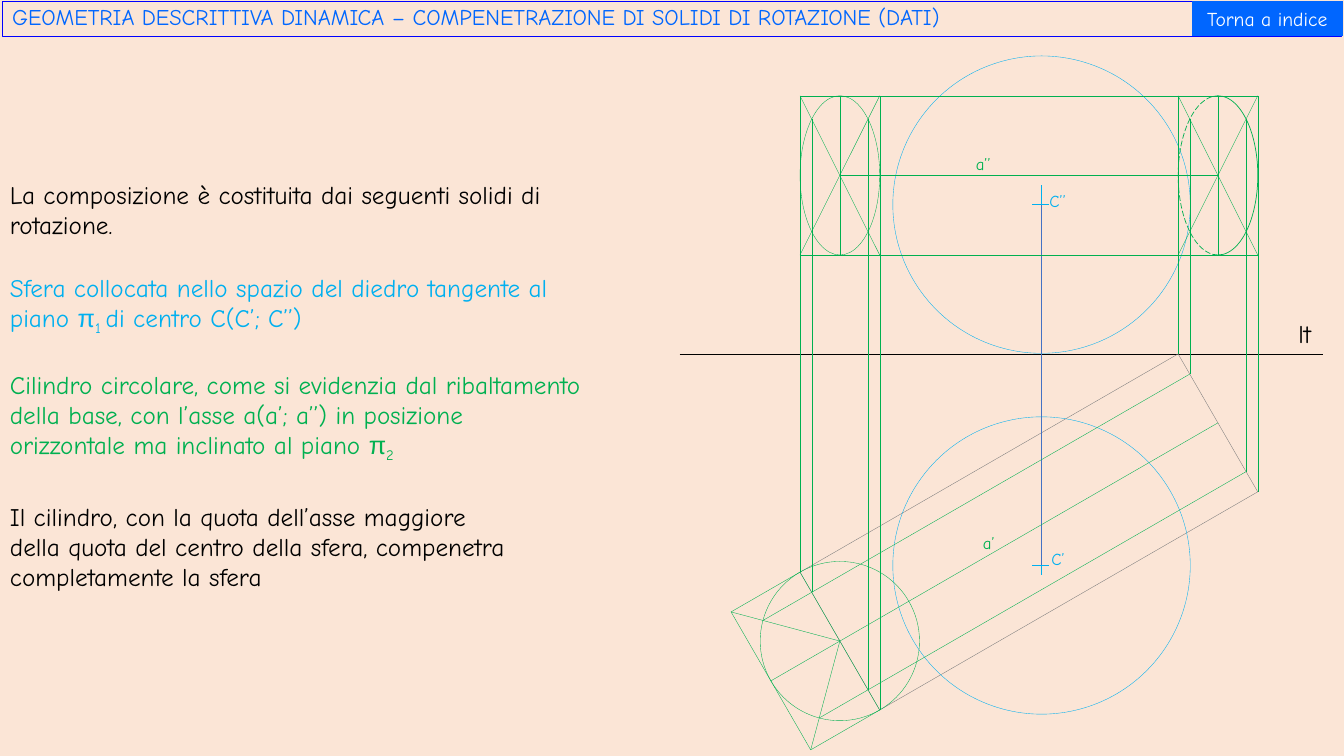
from math import cos, radians, sin, sqrt

from lxml import etree
from pptx import Presentation
from pptx.dml.color import RGBColor
from pptx.enum.dml import MSO_LINE
from pptx.enum.shapes import MSO_CONNECTOR, MSO_SHAPE
from pptx.enum.text import MSO_ANCHOR, MSO_AUTO_SIZE, PP_ALIGN
from pptx.oxml.ns import qn
from pptx.util import Inches, Pt

STRAIGHT = MSO_CONNECTOR.STRAIGHT
RECTANGLE, OVAL, ARC = MSO_SHAPE.RECTANGLE, MSO_SHAPE.OVAL, MSO_SHAPE.ARC
BUTTON = MSO_SHAPE.ACTION_BUTTON_CUSTOM
LEFT, CENTER = PP_ALIGN.LEFT, PP_ALIGN.CENTER

BACKGROUND = RGBColor(0xFB, 0xE5, 0xD6)
BLACK = RGBColor(0x00, 0x00, 0x00)
WHITE = RGBColor(0xFF, 0xFF, 0xFF)
GRAY = RGBColor(0x7C, 0x7C, 0x7C)
CYAN = RGBColor(0x00, 0xB0, 0xF0)
GREEN = RGBColor(0x00, 0xB0, 0x50)
BLUE = RGBColor(0x44, 0x72, 0xC4)
NAVY = RGBColor(0x00, 0x00, 0xFF)
TITLE_BLUE = RGBColor(0x00, 0x66, 0xFF)

FONT, SYMBOL_FONT = "Comic Neue", "Arial"
SUBSCRIPT = "-25000"

# Content
TITLE = "GEOMETRIA DESCRITTIVA DINAMICA – COMPENETRAZIONE DI SOLIDI DI ROTAZIONE (DATI)"
BUTTON_TEXT = "Torna a indice"

# Runs are (text, style); style is "", "symbol" or "subscript"
PARAGRAPHS = [  # top, width, height, colour, runs
    (1.73, 5.8, 0.71, BLACK,
     [("La composizione è costituita dai seguenti solidi di rotazione.", "")]),
    (2.65, 5.8, 0.71, CYAN,
     [("Sfera collocata nello spazio del diedro tangente al piano ", ""),
      ("π", "symbol"), ("1 ", "subscript"), ("di centro C(C’; C’’)", "")]),
    (3.61, 5.87, 1.01, GREEN,
     [("Cilindro circolare, come si evidenzia dal ribaltamento della base, "
       "con l’asse a(a’; a’’) in posizione orizzontale ma inclinato al piano ", ""),
      ("π", "symbol"), ("2", "subscript")]),
    (4.92, 5.18, 1.01, BLACK,
     [("Il cilindro, con la quota dell’asse maggiore della quota del centro "
       "della sfera, compenetra completamente la sfera", "")]),
]
LABELS = [  # text, left, top, width, height, size, colour
    ("lt", 12.78, 3.11, 0.56, 0.4, 18, BLACK),
    ("a’’", 9.58, 1.48, 0.43, 0.3, 12, GREEN),
    ("a’", 9.65, 5.24, 0.43, 0.3, 12, GREEN),
    ("C’’", 10.31, 1.84, 0.43, 0.3, 12, CYAN),
    ("C’", 10.33, 5.39, 0.43, 0.3, 12, CYAN),
]

# Sphere
GROUND_Y = 3.51
SPHERE_X, SPHERE_RADIUS = 10.33, 1.475
SPHERE_Y = {"elevation": 2.03, "plan": 5.61}

# Cylinder: axis in plan, tilted to the ground line
RADIUS, LENGTH, TILT = 0.79, 4.33, 30
ELEVATION_Y = 1.74
NEAR = (8.33, 6.36)
AXIS = (cos(radians(TILT)), -sin(radians(TILT)))
ACROSS = (-AXIS[1], AXIS[0])
GENERATORS = (-1, -sqrt(0.5), 0, sqrt(0.5), 1)


def move(point, along, across=0):
    """Shift a plan point along and across the cylinder axis."""
    return (point[0] + along * AXIS[0] + across * ACROSS[0],
            point[1] + along * AXIS[1] + across * ACROSS[1])


FAR = move(NEAR, LENGTH)

presentation = Presentation()
presentation.slide_width, presentation.slide_height = Inches(13.33), Inches(7.5)
slide = presentation.slides.add_slide(presentation.slide_layouts[5])
slide.background.fill.solid()
slide.background.fill.fore_color.rgb = BACKGROUND


def place(shape, left, top, width, height):
    shape.left, shape.top = Inches(left), Inches(top)
    shape.width, shape.height = Inches(width), Inches(height)


def add_line(start, end, color):
    line = slide.shapes.add_connector(
        STRAIGHT, *(Inches(value) for value in (*start, *end)))
    line.line.color.rgb, line.line.width = color, Pt(0.25)
    etree.SubElement(line._element.spPr, qn("a:effectLst"))


def add_outline(kind, center, width, height, color, weight=0.25):
    shape = slide.shapes.add_shape(
        kind, Inches(center[0] - width / 2), Inches(center[1] - height / 2),
        Inches(width), Inches(height))
    shape.shadow.inherit = False
    shape.fill.background()
    shape.line.color.rgb, shape.line.width = color, Pt(weight)
    return shape


def write(shape, runs, size, color, align=LEFT, anchor=MSO_ANCHOR.TOP):
    frame = shape.text_frame
    frame.word_wrap, frame.auto_size = True, MSO_AUTO_SIZE.NONE
    frame.vertical_anchor = anchor
    paragraph = frame.paragraphs[0]
    paragraph.alignment = align
    for text, style in runs:
        run = paragraph.add_run()
        run.text = text
        run.font.name = SYMBOL_FONT if style == "symbol" else FONT
        run.font.size, run.font.color.rgb = Pt(size), color
        if style == "subscript":
            run._r.get_or_add_rPr().set("baseline", SUBSCRIPT)
    return paragraph


def add_text(left, top, width, height, runs, size, color):
    box = slide.shapes.add_textbox(0, 0, 0, 0)
    place(box, left, top, width, height)
    write(box, runs, size, color)


# Title bar
title = slide.shapes.title
place(title, 0.02, 0.01, 13.28, 0.35)
title.line.color.rgb, title.line.width = NAVY, Pt(0.25)
heading = write(title, [(TITLE, "")], 16, TITLE_BLUE, anchor=MSO_ANCHOR.MIDDLE)
heading.line_spacing = 0.9

# Ground line and cylinder outline in plan
add_line((6.74, GROUND_Y), (13.12, GROUND_Y), BLACK)
body = add_outline(RECTANGLE, move(NEAR, LENGTH / 2), LENGTH, 2 * RADIUS, GRAY)
body.rotation = 360 - TILT

# Sphere with its centre marks
for center_y in SPHERE_Y.values():
    add_outline(OVAL, (SPHERE_X, center_y), 2 * SPHERE_RADIUS, 2 * SPHERE_RADIUS, CYAN)
    add_line((SPHERE_X - 0.09, center_y), (SPHERE_X + 0.07, center_y), CYAN)
add_line((SPHERE_X, 1.84), (SPHERE_X, GROUND_Y), CYAN)
add_line((SPHERE_X, SPHERE_Y["plan"] - SPHERE_RADIUS), (SPHERE_X, 5.7), CYAN)
add_line((SPHERE_X, SPHERE_Y["elevation"]), (SPHERE_X, SPHERE_Y["plan"]), BLUE)

# Cylinder in elevation: edges, axis, base frames and projection lines
top, bottom = ELEVATION_Y - RADIUS, ELEVATION_Y + RADIUS
half_width = RADIUS * ACROSS[0]
for y in (top, bottom):
    add_line((NEAR[0] - half_width, y), (FAR[0] + half_width, y), GREEN)
add_line((NEAR[0], ELEVATION_Y), (FAR[0], ELEVATION_Y), GREEN)
for base in (NEAR, FAR):
    left, right = base[0] - half_width, base[0] + half_width
    add_line((left, top), (right, bottom), GREEN)
    add_line((right, top), (left, bottom), GREEN)
    add_line((base[0], top), (base[0], bottom), GREEN)
    for offset in GENERATORS:
        if offset:
            foot = move(base, 0, offset * RADIUS)
            rise = RADIUS if abs(offset) == 1 else RADIUS * sqrt(1 - offset ** 2)
            add_line(foot, (foot[0], ELEVATION_Y - rise), GREEN)

# Bases in elevation: whole ellipse, then visible and hidden halves
add_outline(OVAL, (NEAR[0], ELEVATION_Y), 2 * half_width, 2 * RADIUS, GREEN)
for angles, dash in (((162, 54), None), ((54, 162), MSO_LINE.LONG_DASH)):
    arc = add_outline(ARC, (FAR[0], ELEVATION_Y), 2 * half_width, 2 * RADIUS, GREEN, 0.5)
    arc.adjustments[0], arc.adjustments[1] = angles
    if dash:
        arc.line.dash_style = dash

# Overturned base and generators in plan
overturned = add_outline(OVAL, NEAR, 2 * RADIUS, 2 * RADIUS, GREEN)
overturned.rotation = 360 - TILT
corners = [move(NEAR, -RADIUS, side * RADIUS) for side in (-1, 1)]
ends = [move(NEAR, 0, side * RADIUS) for side in (-1, 1)]
add_line(*corners, GREEN)
add_line(*ends, GREEN)
for corner, end in zip(corners, ends):
    add_line(end, corner, GREEN)
    add_line(NEAR, corner, GREEN)
for offset in GENERATORS[1:-1]:
    reach = RADIUS * sqrt(1 - offset ** 2)
    add_line(move(FAR, 0, offset * RADIUS), move(NEAR, -reach, offset * RADIUS), GREEN)

# Labels and description
for text, left, top, width, height, size, color in LABELS:
    add_text(left, top, width, height, [(text, "")], size, color)
for top, width, height, color, runs in PARAGRAPHS:
    add_text(0, top, width, height, runs, 18, color)

# Index button
button = slide.shapes.add_shape(BUTTON, 0, 0, 0, 0)
place(button, 11.82, 0.01, 1.5, 0.35)
button.shadow.inherit = False
button.fill.solid()
button.fill.fore_color.rgb = TITLE_BLUE
button.line.fill.background()
write(button, [(BUTTON_TEXT, "")], 14, WHITE, CENTER, MSO_ANCHOR.MIDDLE)

presentation.save("out.pptx")
